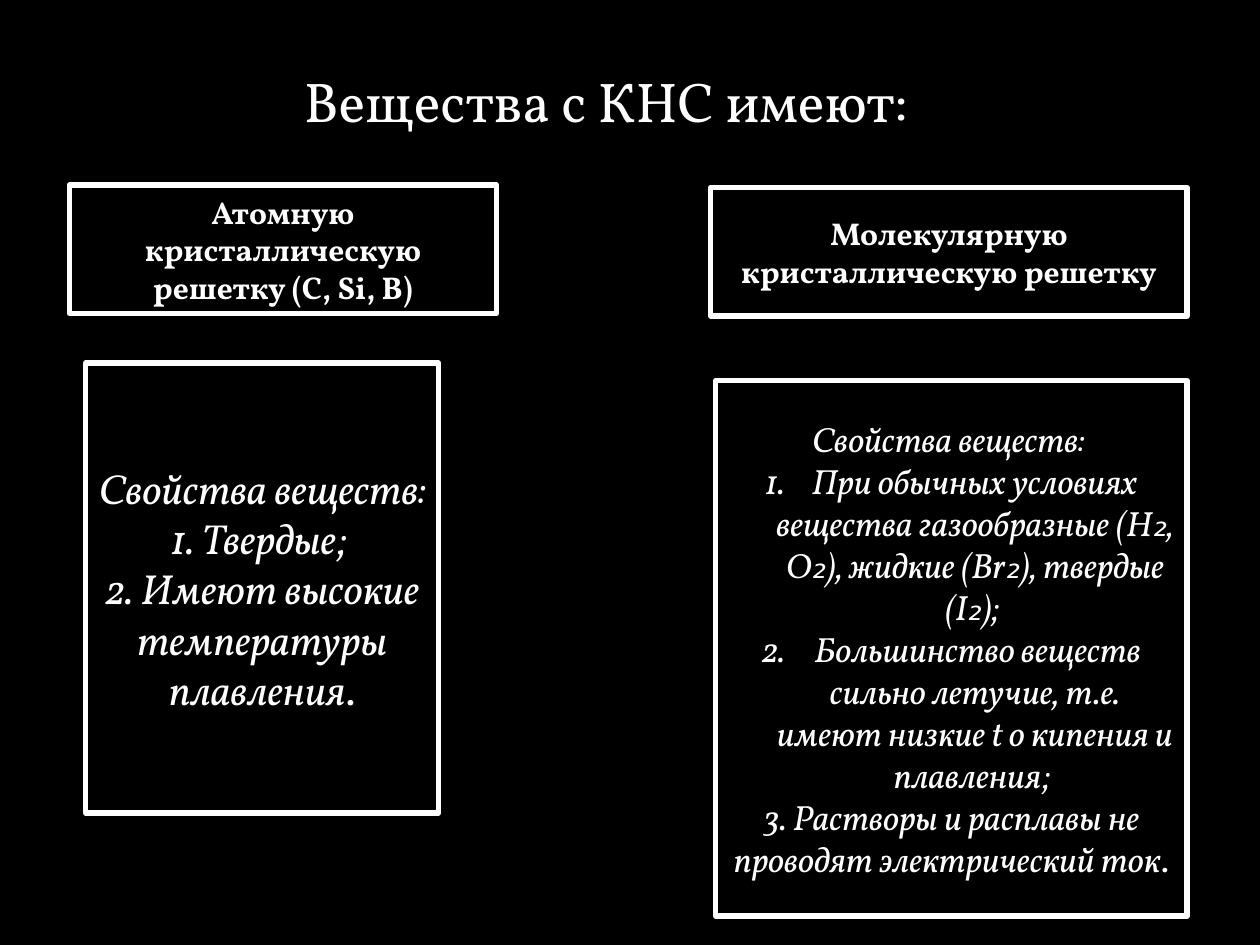
from dataclasses import dataclass
from itertools import groupby

from lxml import etree
from pptx import Presentation
from pptx import util as u
from pptx.dml.color import RGBColor
from pptx.enum import shapes, text
from pptx.oxml.ns import qn


@dataclass(frozen=True)
class Theme:
    dark: RGBColor = RGBColor(0, 0, 0)
    light: RGBColor = RGBColor(255, 255, 255)
    font: str = "Vollkorn"
    subs: str = "DejaVu Sans"  # face for subscript digits
    title: int = 32
    head: int = 18
    left: int = 24
    right: int = 20
    hang: float = 0.95  # list indent, cm


@dataclass(frozen=True)
class Line:
    words: str
    listed: bool = False
    end: str = ""  # upright closing mark


@dataclass(frozen=True)
class Box:
    x: float
    y: float
    w: float
    h: float
    size: int
    lines: tuple[Line, ...]
    bold: bool = False
    slant: bool = False
    edge: RGBColor = Theme.light
    weight: int = 3


THEME = Theme()

TITLE = Box(5.72, 0.74, 13, 2.54, THEME.title,
            (Line("Вещества с КНС имеют:"),), edge=THEME.dark, weight=2)

HEADS = (
    Box(1.4, 3.73, 8.61, 2.59, THEME.head,
        (Line("Атомную кристаллическую решетку (C, Si, B)"),), bold=True),
    Box(14.33, 3.78, 9.6, 2.59, THEME.head,
        (Line("Молекулярную кристаллическую решетку"),), bold=True),
)

TRAITS = (
    Box(1.73, 7.32, 7.11, 9.07, THEME.left, (
        Line("Свойства веществ: "),
        Line("1. Твердые; "),
        Line("2. Имеют высокие температуры плавления", end="."),
    ), slant=True),
    Box(14.43, 7.67, 9.5, 10.8, THEME.right, (
        Line("Свойства веществ: "),
        Line("При обычных условиях вещества газообразные (H₂, O₂), "
             "жидкие (Br₂), твердые (I₂); ", listed=True),
        Line(" Большинство веществ сильно летучие, т.е. имеют низкие "
             "t o кипения и плавления; ", listed=True),
        Line("3. Растворы и расплавы не проводят электрический ток", end="."),
    ), slant=True),
)


def add_run(para, words: str, box: Box, face: str, slant: bool) -> None:
    run = para.add_run()
    run.text = words
    font = run.font
    font.name, font.size = face, u.Pt(box.size)
    font.bold, font.italic = box.bold, slant
    font.color.rgb = THEME.light


def number(para) -> None:
    """Give the paragraph a hanging automatic number."""
    props = para._p.get_or_add_pPr()
    hang = u.Cm(THEME.hang)
    props.set("marL", str(hang))
    props.set("indent", str(-hang))
    etree.SubElement(props, qn("a:buAutoNum"), type="arabicPeriod")


def fill_line(para, line: Line, box: Box) -> None:
    para.alignment = text.PP_ALIGN.CENTER
    if line.listed:
        number(para)
    for low, chars in groupby(line.words, lambda char: char == "₂"):
        face = THEME.subs if low else THEME.font
        add_run(para, "".join(chars), box, face, box.slant)
    if line.end:
        add_run(para, line.end, box, THEME.font, False)


def draw(slide, box: Box) -> None:
    place = [u.Cm(n) for n in (box.x, box.y, box.w, box.h)]
    shape = slide.shapes.add_shape(shapes.MSO_SHAPE.RECTANGLE, *place)
    shape.shadow.inherit = False
    shape.fill.solid()
    shape.fill.fore_color.rgb = THEME.dark
    shape.line.color.rgb = box.edge
    shape.line.width = u.Pt(box.weight)
    frame = shape.text_frame
    frame.word_wrap = True
    frame.vertical_anchor = text.MSO_ANCHOR.MIDDLE
    for i, line in enumerate(box.lines):
        para = frame.add_paragraph() if i else frame.paragraphs[0]
        fill_line(para, line, box)


def main() -> None:
    deck = Presentation()
    deck.slide_width, deck.slide_height = u.Cm(25.4), u.Cm(19.05)
    slide = deck.slides.add_slide(deck.slide_layouts[6])

    # Background
    back = slide.background.fill
    back.solid()
    back.fore_color.rgb = THEME.dark

    # Title, column heads, then the properties below them
    for box in (TITLE, *HEADS, *TRAITS):
        draw(slide, box)

    deck.save("out.pptx")


if __name__ == "__main__":
    main()
